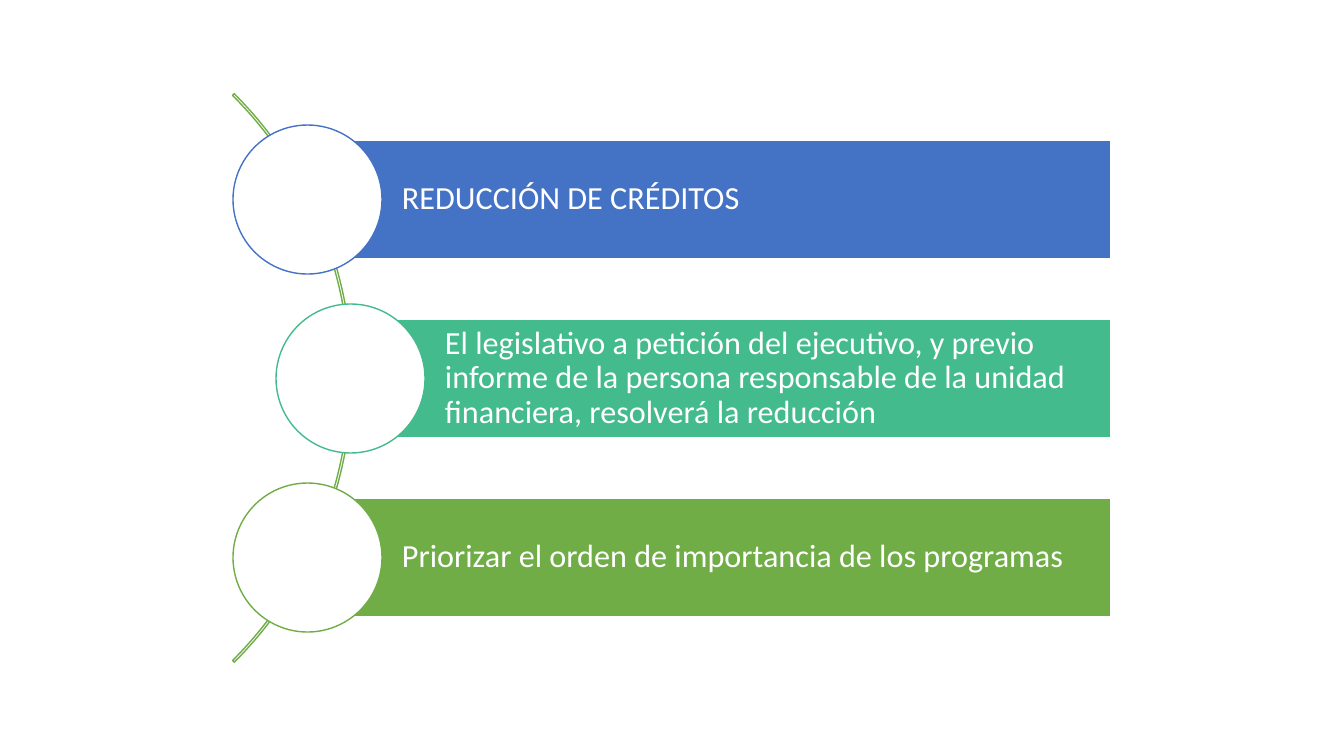
from pptx import Presentation
from pptx.dml.color import RGBColor
from pptx.enum.shapes import MSO_SHAPE
from pptx.enum.text import MSO_ANCHOR, PP_ALIGN
from pptx.util import Pt

SLIDE_W, SLIDE_H = 1344, 756
EMU_PER_PX = 6858000 / SLIDE_H
COLORS = {"white": "FFFFFF", "blue": "4472C4", "teal": "43BB8D", "green": "70AD47"}


def px(length):
    return round(length * EMU_PER_PX)


def add_block(preset, box, text="", fill=None, line="white", size=23, inset_left=95, inset=6):
    """Add a preset shape at box (left, top, width, height), with optional text."""
    block = slide.shapes.add_shape(preset, *map(px, box))
    block.shadow.inherit = False
    if fill:
        block.fill.solid()
        block.fill.fore_color.rgb = RGBColor.from_string(COLORS[fill])
    else:
        block.fill.background()
    block.line.color.rgb = RGBColor.from_string(COLORS[line])
    block.line.width = Pt(1)
    if text:
        frame = block.text_frame
        frame.word_wrap = True
        frame.vertical_anchor = MSO_ANCHOR.MIDDLE
        frame.margin_left = px(inset_left)
        frame.margin_top = frame.margin_right = frame.margin_bottom = px(inset)
        paragraph = frame.paragraphs[0]
        paragraph.alignment = PP_ALIGN.LEFT
        paragraph.line_spacing = 0.9
        run = paragraph.add_run()
        run.text = text
        run.font.name = "Calibri"
        run.font.size = Pt(size)
        run.font.color.rgb = RGBColor.from_string(COLORS["white"])
    return block


prs = Presentation()
prs.slide_width, prs.slide_height = px(SLIDE_W), px(SLIDE_H)
slide = prs.slides.add_slide(prs.slide_layouts[6])

# Arc that links the steps, from 315 to 45 degrees
ARC_SIZE = 804
arc = add_block(MSO_SHAPE.BLOCK_ARC,
                (-452, (SLIDE_H - ARC_SIZE) // 2, ARC_SIZE, ARC_SIZE), line="green")
for index, value in enumerate((189, 27, 0.003)):
    arc.adjustments[index] = value

# Each step is a bar that starts at the centre of its circle
BAR_RIGHT, BAR_HEIGHT = 1111, 119
CIRCLE_SIZE = 149
FIRST_CENTER, STEP_PITCH = 199, 179
steps = [
    (307, "blue", "REDUCCIÓN DE CRÉDITOS"),
    (350, "teal", "El legislativo a petición del ejecutivo, y previo informe de la persona "
                  "responsable de la unidad financiera, resolverá la reducción"),
    (307, "green", "Priorizar el orden de importancia de los programas"),
]
for index, (center_x, color, wording) in enumerate(steps):
    center_y = FIRST_CENTER + index * STEP_PITCH
    add_block(MSO_SHAPE.RECTANGLE,
              (center_x, center_y - BAR_HEIGHT // 2, BAR_RIGHT - center_x, BAR_HEIGHT),
              text=wording, fill=color)
    add_block(MSO_SHAPE.OVAL,
              (center_x - CIRCLE_SIZE // 2, center_y - CIRCLE_SIZE // 2, CIRCLE_SIZE, CIRCLE_SIZE),
              fill="white", line=color)

prs.save("out.pptx")
